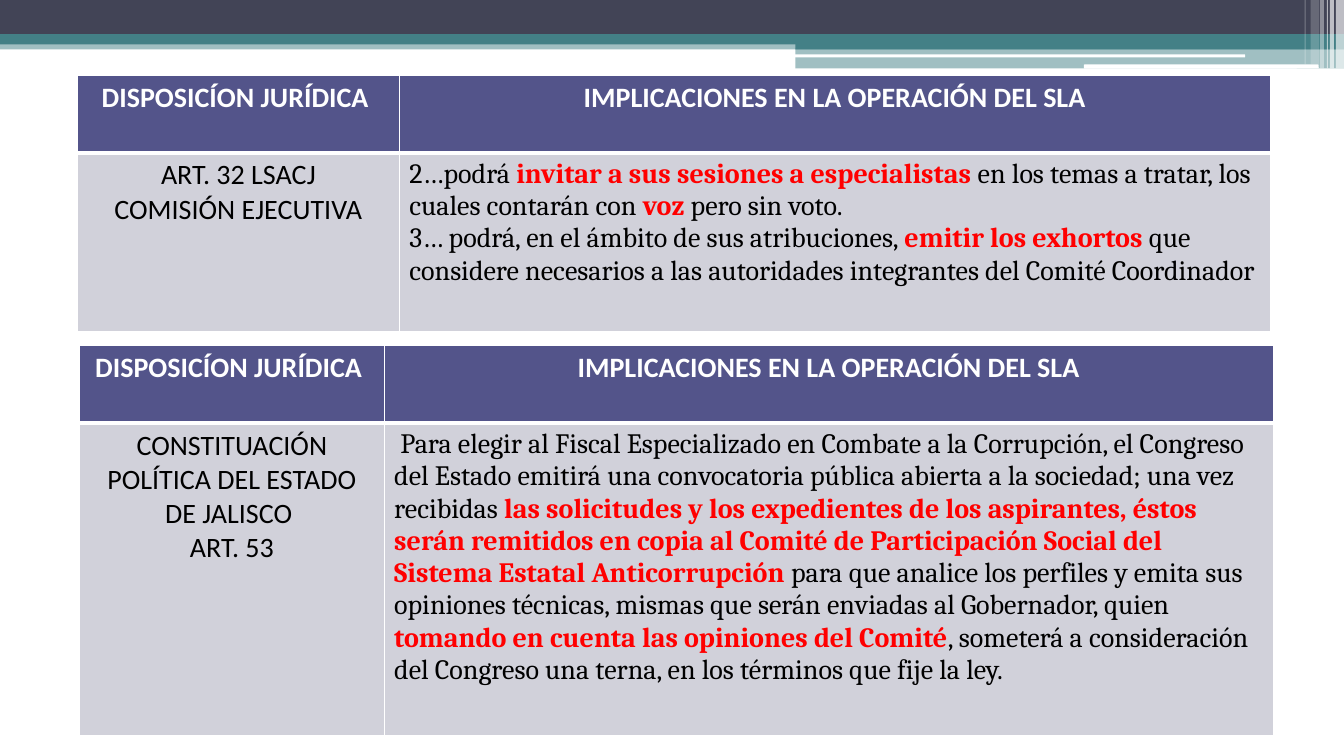
from dataclasses import dataclass

import pptx
import pptx.dml.color
import pptx.enum.shapes
import pptx.enum.text
import pptx.oxml
import pptx.oxml.ns
import pptx.util
from pptx.util import Inches

SHAPE = pptx.enum.shapes.MSO_SHAPE
ALIGN = pptx.enum.text.PP_ALIGN


@dataclass(frozen=True)
class Theme:
    white: str = "FFFFFF"
    black: str = "000000"
    dark: str = "424456"
    teal: str = "438086"
    header: str = "53548A"
    body: str = "D1D1DA"
    emphasis: str = "FF0000"
    label_font: str = "Calibri"
    text_font: str = "Cambria"
    size: int = 20
    thin_rule: float = 1
    thick_rule: float = 3


THEME = Theme()
HEADINGS = ("DISPOSICÍON JURÍDICA ", "IMPLICACIONES EN LA OPERACIÓN DEL SLA")

# Within each paragraph, plain and emphasised runs alternate
COMMISSION_LABEL = ["ART. 32 LSACJ"], ["COMISIÓN EJECUTIVA"]
COMMISSION_TEXT = (
    ["2…podrá ", "invitar a sus sesiones a especialistas",
     " en los temas a tratar, los cuales contarán con ", "voz ", "pero sin voto."],
    ["3… podrá, en el ámbito de sus atribuciones, ", "emitir los exhortos ",
     "que considere necesarios a las autoridades integrantes del Comité Coordinador"],
)
CONSTITUTION_LABEL = ["CONSTITUACIÓN POLÍTICA DEL ESTADO DE JALISCO "], ["ART. 53"]
CONSTITUTION_TEXT = (
    [" Para elegir al Fiscal Especializado en Combate a la Corrupción, el Congreso del Estado "
     "emitirá una convocatoria pública abierta a la sociedad; una vez recibidas ",
     "las solicitudes y los expedientes de los aspirantes, éstos serán remitidos en copia al "
     "Comité de Participación Social del Sistema Estatal Anticorrupción ",
     "para que analice los perfiles y emita sus opiniones técnicas, mismas que serán enviadas "
     "al Gobernador, quien ",
     "tomando en cuenta las opiniones del Comité",
     ", someterá a consideración del Congreso una terna, en los términos que fije la ley."],
)


def rgb(color):
    return pptx.dml.color.RGBColor.from_string(color)


def add_bar(slide, left, top, width, height, color, opacity=100, kind=SHAPE.RECTANGLE):
    shape = slide.shapes.add_shape(kind, Inches(left), Inches(top), Inches(width), Inches(height))
    shape.shadow.inherit = False
    shape.line.fill.background()
    shape.fill.solid()
    shape.fill.fore_color.rgb = rgb(color)
    if opacity < 100:
        color_element = shape.fill._xPr.find(".//" + pptx.oxml.ns.qn("a:srgbClr"))
        alpha = pptx.oxml.parse_xml(
            f'<a:alpha {pptx.oxml.ns.nsdecls("a")} val="{opacity * 1000}"/>')
        color_element.append(alpha)


def add_banner(slide, left, top, width):
    """Draw the layered bands and the light stripes at their right end."""
    right = left + width
    # Full-width bands
    add_bar(slide, left, top + 0.4, width, 0.09, THEME.teal, 50)
    add_bar(slide, left, top, width, 0.34, THEME.dark)
    add_bar(slide, left, top + 0.34, width, 0.1, THEME.teal)
    # Right-hand step with its white rules
    add_bar(slide, right - 5.44, top + 0.39, 5.44, 0.1, THEME.teal)
    add_bar(slide, right - 5.44, top + 0.48, 5.44, 0.2, THEME.teal, 50)
    add_bar(slide, right - 5.45, top + 0.54, 4.47, 0.03, THEME.white, kind=SHAPE.ROUNDED_RECTANGLE)
    add_bar(slide, right - 2.58, top + 0.64, 2.33, 0.04, THEME.white, kind=SHAPE.ROUNDED_RECTANGLE)
    # Stripes: distance from the right edge, width, height, opacity
    for offset, stripe_width, height, opacity in (
            (0.08, 0.08, 0.68, 65), (0.14, 0.04, 0.68, 65), (0.17, 0.01, 0.68, 60),
            (0.24, 0.04, 0.68, 40), (0.33, 0.08, 0.64, 20), (0.39, 0.01, 0.64, 30)):
        add_bar(slide, right - offset, top, stripe_width, height, THEME.white, opacity)


def format_cell(cell, color, top_rule, bottom_rule):
    properties = cell._tc.get_or_add_tcPr()
    rules = {"L": THEME.thin_rule, "R": THEME.thin_rule, "T": top_rule, "B": bottom_rule}
    for side, points in rules.items():
        properties.append(pptx.oxml.parse_xml(
            f'<a:ln{side} {pptx.oxml.ns.nsdecls("a")} w="{pptx.util.Pt(points)}"><a:solidFill>'
            f'<a:srgbClr val="{THEME.white}"/></a:solidFill></a:ln{side}>'))
    cell.fill.solid()
    cell.fill.fore_color.rgb = rgb(color)


def write_cell(cell, paragraphs, font_name, color, alignment, bold=False):
    frame = cell.text_frame
    for index, runs in enumerate(paragraphs):
        paragraph = frame.add_paragraph() if index else frame.paragraphs[0]
        paragraph.alignment = alignment
        paragraph.font.name = font_name
        paragraph.font.size = pptx.util.Pt(THEME.size)
        paragraph.font.bold = bold
        paragraph.font.color.rgb = rgb(color)
        for position, text in enumerate(runs):
            run = paragraph.add_run()
            run.text = text
            if position % 2:
                run.font.bold = True
                run.font.color.rgb = rgb(THEME.emphasis)


def add_provision_table(slide, left, top, column_widths, row_heights, label, text):
    """Place one legal provision beside its implications, under the headings."""
    table = slide.shapes.add_table(
        2, 2, Inches(left), Inches(top),
        Inches(sum(column_widths)), Inches(sum(row_heights))).table
    for column, width in zip(table.columns, column_widths):
        column.width = Inches(width)
    for row, height in zip(table.rows, row_heights):
        row.height = Inches(height)
    # Heading row
    for cell, heading in zip(table.rows[0].cells, HEADINGS):
        format_cell(cell, THEME.header, THEME.thin_rule, THEME.thick_rule)
        write_cell(cell, [[heading]], THEME.label_font, THEME.white, ALIGN.CENTER, bold=True)
    # Provision row
    for cell in table.rows[1].cells:
        format_cell(cell, THEME.body, THEME.thick_rule, THEME.thin_rule)
    write_cell(table.cell(1, 0), label, THEME.label_font, THEME.black, ALIGN.CENTER)
    write_cell(table.cell(1, 1), text, THEME.text_font, THEME.black, ALIGN.LEFT)


def main():
    presentation = pptx.Presentation()
    presentation.slide_width = Inches(13.33)
    presentation.slide_height = Inches(7.5)
    slide = presentation.slides.add_slide(presentation.slide_layouts[6])
    add_banner(slide, 0, 0, 13.33)
    add_provision_table(slide, 0.77, 0.75, (3.19, 8.64), (0.77, 1.77),
                        COMMISSION_LABEL, COMMISSION_TEXT)
    add_provision_table(slide, 0.79, 3.43, (3.02, 8.82), (0.77, 3.1),
                        CONSTITUTION_LABEL, CONSTITUTION_TEXT)
    presentation.save("out.pptx")


if __name__ == "__main__":
    main()
